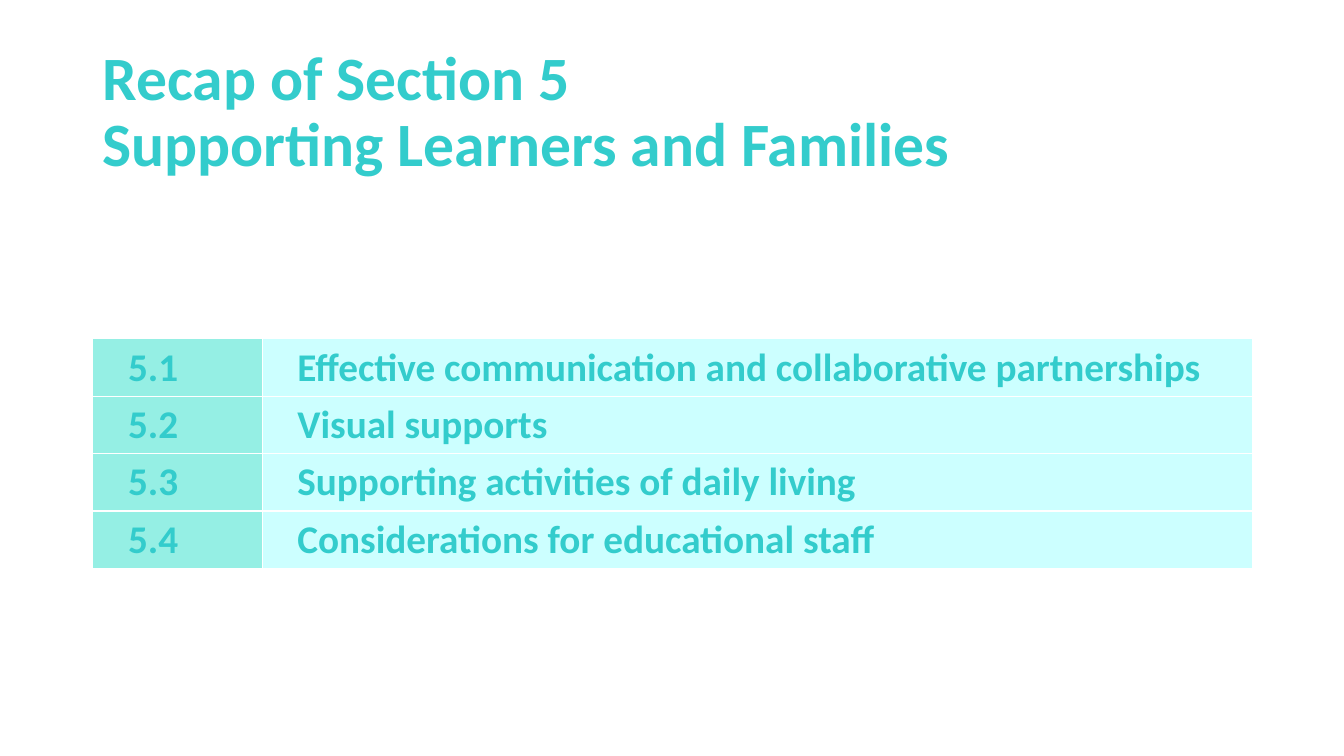
import pptx
import pptx.util
import pptx.dml.color
import pptx.enum.text

Inches = pptx.util.Inches
RGBColor = pptx.dml.color.RGBColor

TURQUOISE = RGBColor(0x33, 0xCC, 0xCC)
MINT = RGBColor(0x95, 0xEF, 0xE4)
PALE_CYAN = RGBColor(0xCC, 0xFF, 0xFF)

LEFT, WIDTH = Inches(0.92), Inches(11.5)
ROW_HEIGHT = 0.57
COLUMN_WIDTHS = [1.68, 9.82]
COLUMN_FILLS = [MINT, PALE_CYAN]
TOPICS = [
    ("5.1", "Effective communication and collaborative partnerships"),
    ("5.2", "Visual supports"),
    ("5.3", "Supporting activities of daily living"),
    ("5.4", "Considerations for educational staff"),
]


def format_font(font, size):
    values = {"name": "Calibri", "size": pptx.util.Pt(size), "bold": True}
    for name, value in values.items():
        setattr(font, name, value)
    font.color.rgb = TURQUOISE


presentation = pptx.Presentation()
presentation.slide_width = Inches(13.33)
presentation.slide_height = Inches(7.5)
slide = presentation.slides.add_slide(presentation.slide_layouts[6])

title = slide.shapes.add_textbox(LEFT, Inches(0.4), WIDTH, Inches(1.45))
title.text_frame.word_wrap = True
title.text_frame.vertical_anchor = pptx.enum.text.MSO_ANCHOR.MIDDLE
paragraph = title.text_frame.paragraphs[0]
paragraph.text = "Recap of Section 5\vSupporting Learners and Families"
paragraph.line_spacing = 0.9
for run in paragraph.runs:
    format_font(run.font, 44)

table = slide.shapes.add_table(
    len(TOPICS), len(COLUMN_WIDTHS), LEFT, Inches(3.36), WIDTH,
    Inches(ROW_HEIGHT * len(TOPICS)),
).table
table.first_row = False
table.horz_banding = False
for column, width in zip(table.columns, COLUMN_WIDTHS):
    column.width = Inches(width)

for row, topic in zip(table.rows, TOPICS):
    row.height = Inches(ROW_HEIGHT)
    for cell, text, fill in zip(row.cells, topic, COLUMN_FILLS):
        cell.fill.solid()
        cell.fill.fore_color.rgb = fill
        paragraph = cell.text_frame.paragraphs[0]
        paragraph.text = text
        paragraph._p.get_or_add_pPr().set("marL", str(Inches(0.25)))
        format_font(paragraph.runs[0].font, 28)

presentation.save("out.pptx")
